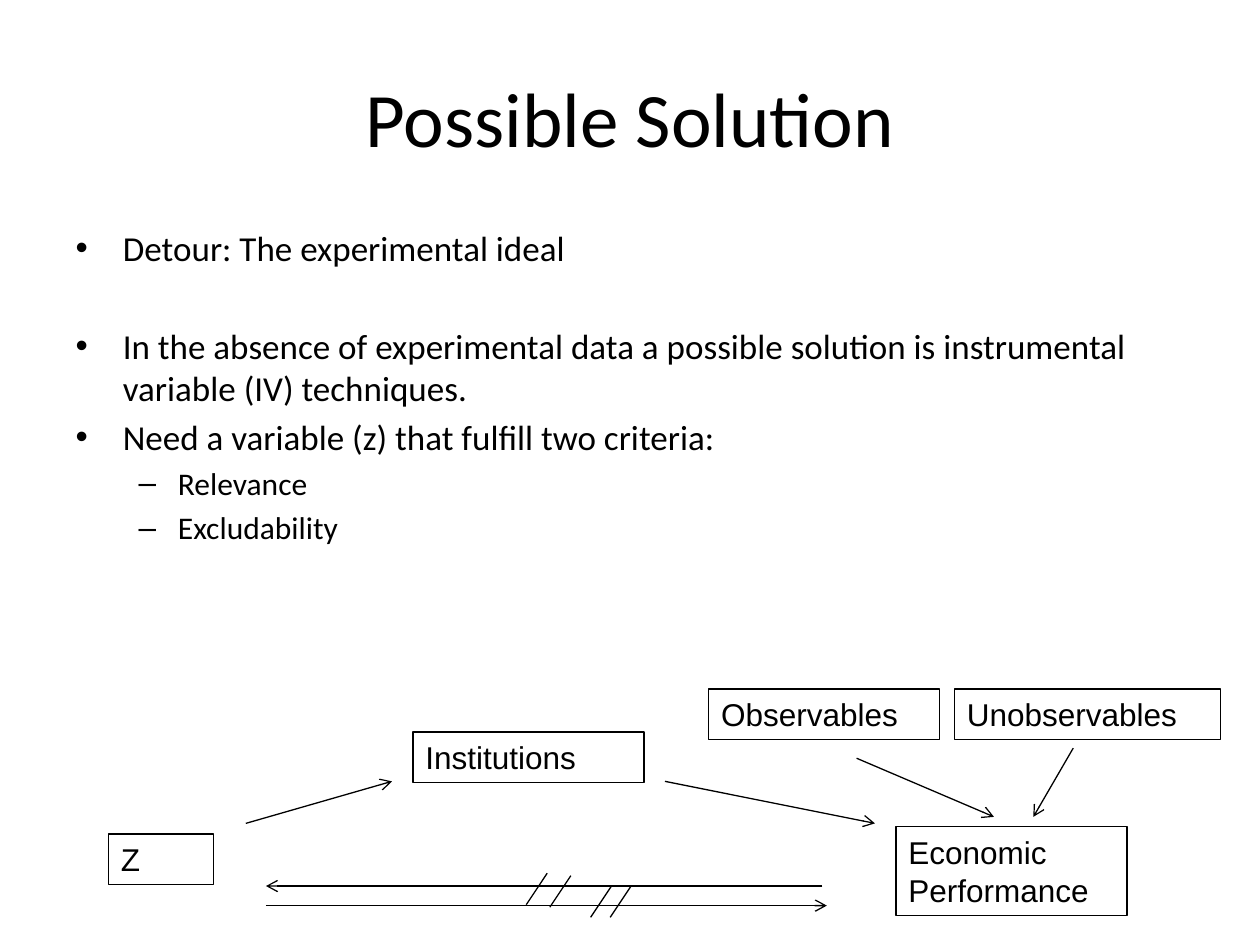
"""Build the "Possible Solution" slide with its instrumental-variable diagram."""
from lxml import etree
from pptx import Presentation
from pptx.dml.color import RGBColor
from pptx.enum.shapes import MSO_CONNECTOR, MSO_SHAPE
from pptx.enum.text import MSO_ANCHOR, MSO_AUTO_SIZE, PP_ALIGN
from pptx.oxml.ns import qn
from pptx.util import Pt

RECTANGLE = MSO_SHAPE.RECTANGLE
STRAIGHT = MSO_CONNECTOR.STRAIGHT
TOP, MIDDLE = MSO_ANCHOR.TOP, MSO_ANCHOR.MIDDLE
LEFT, CENTER = PP_ALIGN.LEFT, PP_ALIGN.CENTER
FIXED, GROW = MSO_AUTO_SIZE.NONE, MSO_AUTO_SIZE.SHAPE_TO_FIT_TEXT
COLORS = {"ink": "000000"}
INK = RGBColor.from_string(COLORS["ink"])


def add_run(paragraph, text, size, font):
    run = paragraph.add_run()
    run.text = text
    run.font.size = Pt(size)
    run.font.name = font
    run.font.color.rgb = INK


def add_line(start, end, arrow=False):
    link = slide.shapes.add_connector(STRAIGHT, *map(Pt, start + end))
    link.line.color.rgb = INK
    link.line.width = Pt(0.75)
    properties = link.element.spPr
    if arrow:
        etree.SubElement(properties.find(qn("a:ln")), qn("a:tailEnd"), type="arrow")
    etree.SubElement(properties, qn("a:effectLst"))


presentation = Presentation()
presentation.slide_width, presentation.slide_height = Pt(720), Pt(540)
slide = presentation.slides.add_slide(presentation.slide_layouts[1])

title = slide.shapes.title
title.left, title.top, title.width, title.height = map(Pt, (36, 21.6, 648, 90))
title.text_frame.vertical_anchor = MIDDLE
heading = title.text_frame.paragraphs[0]
heading.alignment = CENTER
add_run(heading, "Possible Solution", 44, "Calibri")

body = slide.placeholders[1]
body.left, body.top, body.width, body.height = map(Pt, (36, 126, 648, 356.4))
body.text_frame.auto_size = FIXED
body.text_frame.vertical_anchor = TOP

points = [
    ("Detour: The experimental ideal", 0, 0),
    ("In the absence of experimental data a possible solution is "
     "instrumental variable (IV) techniques.", 0, 32),
    ("Need a variable (z) that fulfill two criteria:", 0, 4),
    ("Relevance", 1, 3.6),
    ("Excludability", 1, 3.6),
]
level_styles = [(20, 27, -27, "•"), (18, 58.5, -22.5, "–")]
for index, (text, level, space_before) in enumerate(points):
    size, margin, indent, bullet = level_styles[level]
    point = body.text_frame.add_paragraph() if index else body.text_frame.paragraphs[0]
    point.level = level
    point.space_before = Pt(space_before)
    point_properties = point._p.get_or_add_pPr()
    point_properties.set("marL", str(Pt(margin)))
    point_properties.set("indent", str(Pt(indent)))
    etree.SubElement(point_properties, qn("a:buFont"), typeface="Arial")
    etree.SubElement(point_properties, qn("a:buChar"), char=bullet)
    add_run(point, text, size, "Calibri")

variables = [
    ("Institutions", 236, 418.3, 132, 29),
    ("Economic Performance", 512, 472.3, 132, 51),
    ("Z", 62, 476.6, 60, 29),
    ("Observables", 405, 393.8, 132, 29),
    ("Unobservables", 545.5, 393.8, 152, 29),
]
for label, *bounds in variables:
    variable = slide.shapes.add_shape(RECTANGLE, *map(Pt, bounds))
    variable.shadow.inherit = False
    variable.fill.background()
    variable.line.color.rgb = INK
    variable.line.width = Pt(0.75)
    variable.text_frame.word_wrap = True
    variable.text_frame.auto_size = GROW
    variable.text_frame.vertical_anchor = TOP
    caption = variable.text_frame.paragraphs[0]
    caption.alignment = LEFT
    add_run(caption, label, 18, "Arial")

causal_paths = [
    ((380, 446.5), (500, 470.5)),
    ((470, 506.3), (152, 506.3)),
    ((140.5, 470.5), (224, 446.5)),
    ((489.5, 433.3), (568, 466.8)),
    ((613.3, 427.5), (590.5, 466.8)),
    ((152, 517.5), (472.5, 517.5)),
]
for start, end in causal_paths:
    add_line(start, end, arrow=True)

for left, bottom in [(300.7, 517), (314.2, 518.4), (337.5, 524.2), (348.7, 524.2)]:
    add_line((left, bottom), (left + 12, bottom - 18))

presentation.save("out.pptx")
